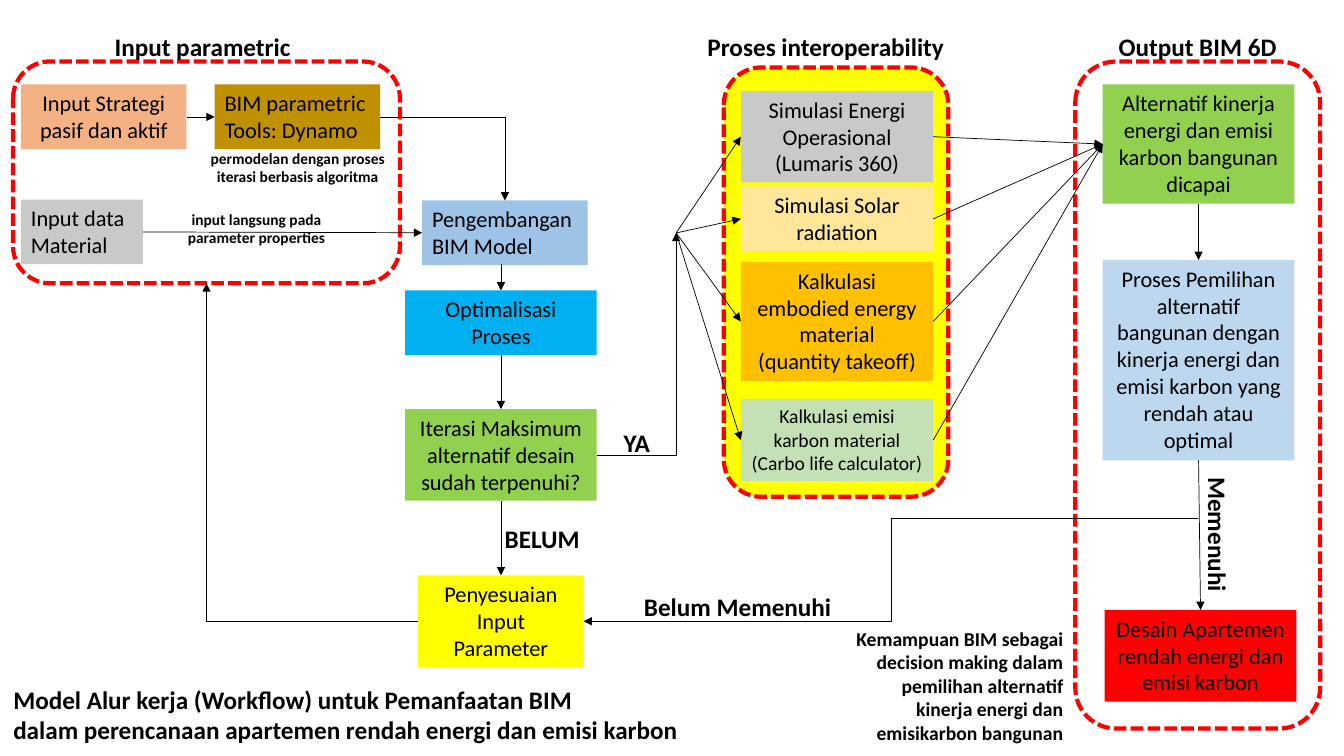
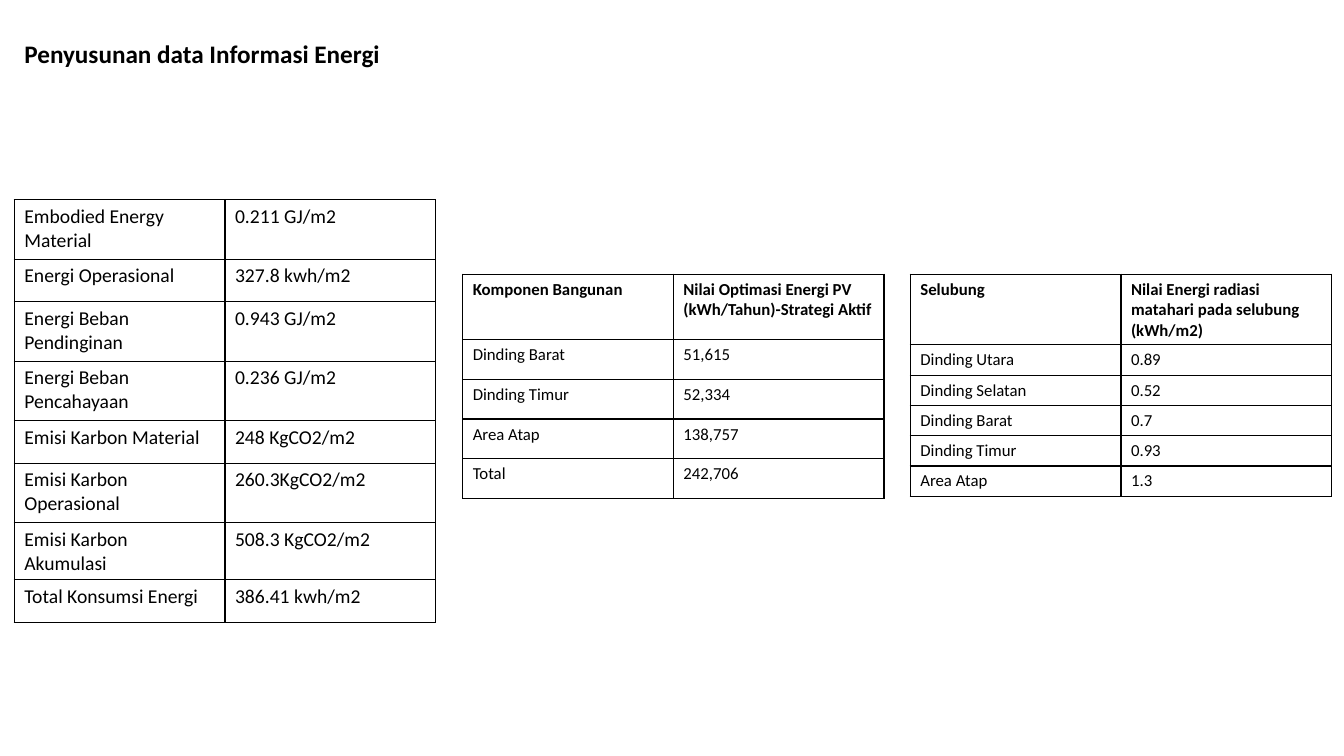
from pptx import Presentation
from pptx.dml.color import RGBColor
from pptx.enum import dml, shapes, text
from pptx.oxml import ns, xmlchemy
from pptx.util import Cm, Pt

FONT = "Calibri"
BLACK, RED, YELLOW = "000000", "FF0000", "FFFF00"
GREY, GREEN = "C9C9C9", "92D050"
LEFT, CENTER, RIGHT = text.PP_ALIGN.LEFT, text.PP_ALIGN.CENTER, text.PP_ALIGN.RIGHT
STRAIGHT, ELBOW = shapes.MSO_CONNECTOR.STRAIGHT, shapes.MSO_CONNECTOR.ELBOW
TOP_SITE, LEFT_SITE, BOTTOM_SITE, RIGHT_SITE = range(4)


def rgb(value):
    """Turn a hex string into a colour."""
    return RGBColor.from_string(value)


def child(parent, tag, index=None, **attrs):
    """Add one XML element to a parent, at an index or at the end."""
    e = xmlchemy.OxmlElement(tag)
    for name, value in attrs.items():
        e.set(name, str(value))
    parent.insert(len(parent) if index is None else index, e)
    return e


def write(tf, content, size, bold=False, align=LEFT):
    """Write the lines of a text, one paragraph each."""
    for i, line in enumerate(content.split("\n")):
        p = tf.paragraphs[0] if i == 0 else tf.add_paragraph()
        p.alignment = align
        r = p.add_run()
        r.text = line
        r.font.name, r.font.size, r.font.bold = FONT, Pt(size), bold
        r.font.color.rgb = rgb(BLACK)


def title(s, content, x, y, w, h):
    """Place and format the title of a slide."""
    sp = s.shapes.title
    sp.left, sp.top, sp.width, sp.height = Cm(x), Cm(y), Cm(w), Cm(h)
    tf = sp.text_frame
    tf.word_wrap = False
    tf.auto_size = text.MSO_AUTO_SIZE.SHAPE_TO_FIT_TEXT
    tf.vertical_anchor = text.MSO_ANCHOR.TOP
    write(tf, content, 18, True)


def label(s, content, x, y, w, h=1.02, size=18, align=LEFT, wrap=False):
    """Add a bold label without a fill."""
    sp = s.shapes.add_textbox(Cm(x), Cm(y), Cm(w), Cm(h))
    sp.text_frame.word_wrap = wrap
    sp.text_frame.auto_size = text.MSO_AUTO_SIZE.SHAPE_TO_FIT_TEXT
    write(sp.text_frame, content, size, True, align)
    return sp


def step(s, content, color, x, y, w, h, align=CENTER, size=16):
    """Add a filled box for one step of the workflow."""
    sp = s.shapes.add_shape(shapes.MSO_SHAPE.RECTANGLE, Cm(x), Cm(y), Cm(w), Cm(h))
    sp.shadow.inherit = False
    sp.fill.solid()
    sp.fill.fore_color.rgb = rgb(color)
    sp.line.fill.background()
    tf = sp.text_frame
    tf.word_wrap = True
    tf.vertical_anchor = text.MSO_ANCHOR.TOP
    write(tf, content, size, False, align)
    return sp


def frame(s, box, heading, dx, w, color=None):
    """Add a dashed region with its heading above it."""
    sp = s.shapes.add_shape(shapes.MSO_SHAPE.ROUNDED_RECTANGLE, *map(Cm, box))
    sp.shadow.inherit = False
    if color:
        sp.fill.solid()
        sp.fill.fore_color.rgb = rgb(color)
    else:
        sp.fill.background()
    sp.line.color.rgb = rgb(RED)
    sp.line.width = Pt(3)
    sp.line.dash_style = dml.MSO_LINE.SQUARE_DOT
    label(s, heading, box[0] + dx, 0.66, w)
    return sp


def spot(end):
    """Find the point of an end, given as a point or as a shape and its site."""
    sp, site = end
    if isinstance(sp, int):
        return end
    fx, fy = [(0.5, 0), (0, 0.5), (0.5, 1), (1, 0.5)][site]
    return int(sp.left + sp.width * fx), int(sp.top + sp.height * fy)


def arrow(s, start, end, kind=STRAIGHT, corner=False):
    """Draw a thin arrow and glue it to the shapes at its ends."""
    c = s.shapes.add_connector(kind, *spot(start), *spot(end))
    if not isinstance(start[0], int):
        c.begin_connect(*start)
    if not isinstance(end[0], int):
        c.end_connect(*end)
    c.line.color.rgb = rgb(BLACK)
    c.line.width = Pt(0.5)
    spPr = c._element.spPr
    if corner:
        spPr.find(ns.qn("a:prstGeom")).set("prst", "bentConnector2")
    child(spPr.find(ns.qn("a:ln")), "a:tailEnd", type="triangle")
    child(spPr, "a:effectLst")


def input_region(s, box):
    """Build the parametric input and return the parts that arrows meet."""
    x, y = box[:2]
    region = frame(s, box, "Input parametric", 2.31, 4.98)
    strategy = step(s, "Input Strategi pasif dan aktif", "F4B183", x + 0.2, y + 0.58, 4.17, 1.63)
    tools = step(s, "BIM parametric\nTools: Dynamo", "BF9000", x + 5.08, y + 0.58, 4.17, 1.63, LEFT)
    material = step(s, "Input data Material", GREY, x + 0.2, y + 3.48, 3.07, 1.63, LEFT)
    for content, dx, dy in [
        ("permodelan dengan proses iterasi berbasis algoritma", 4.52, 2.08),
        ("input langsung pada parameter properties", 3.48, 3.61),
    ]:
        label(s, content, x + dx, y + dy, 5.31, 1.19, 11, CENTER, True)
    arrow(s, (strategy, RIGHT_SITE), (tools, LEFT_SITE))
    return region, tools, material


def model_column(s, box):
    """Build the model column and return the parts that arrows meet."""
    x, y, w = box[:3]
    model = step(s, "Pengembangan BIM Model", "9DC3E6", x + 0.43, y, 4.17, 1.63, LEFT)
    optimum = step(s, "Optimalisasi Proses", "00B0F0", x, y + 2.27, w, 1.63)
    check = step(s, "Iterasi Maksimum alternatif desain sudah terpenuhi?", GREEN,
                 x, y + 5.26, w, 2.31)
    adjust = step(s, "Penyesuaian Input Parameter", YELLOW, x + 0.33, y + 9.45, 4.17, 2.31)
    label(s, "BELUM", x + 2.26, y + 8.01, 2.41)
    label(s, "YA", x + 5.26, y + 5.59, 1.17)
    label(s, "Belum Memenuhi", x + 5.77, y + 9.73, 5.26)
    arrow(s, (Cm(x + w / 2), Cm(y + 1.6)), (optimum, TOP_SITE))
    arrow(s, (optimum, BOTTOM_SITE), (check, TOP_SITE))
    arrow(s, (check, BOTTOM_SITE), (adjust, TOP_SITE))
    return model, check, adjust


def process_region(s, box):
    """Build the interoperability region and return its simulation boxes."""
    x, y = box[:2]
    frame(s, box, "Proses interoperability", -0.66, 6.5, YELLOW)
    simulations = [
        ("Simulasi Energi Operasional (Lumaris 360)", GREY, 0.59, 2.31, 16),
        ("Simulasi Solar radiation", "FFE699", 3, 1.63, 16),
        ("Kalkulasi embodied energy material\n(quantity takeoff)", "FFC000", 4.9, 3, 16),
        ("Kalkulasi emisi karbon material\n(Carbo life calculator)", "C5E0B4", 8.36, 2.06, 14),
    ]
    return [step(s, content, color, x + 0.43, y + dy, 4.85, h, size=size)
            for content, color, dy, h, size in simulations]


def output_region(s, box):
    """Build the output region and return its first box."""
    x, y = box[:2]
    frame(s, box, "Output BIM 6D", 0.84, 4.52)
    reached = step(s, "Alternatif kinerja energi dan emisi karbon bangunan dicapai", GREEN,
                   x + 0.69, y + 0.58, 4.83, 3)
    choice = step(s, "Proses Pemilihan alternatif bangunan dengan kinerja energi dan "
                  "emisi karbon yang rendah atau optimal", "BDD7EE", x + 0.69, y + 5, 4.83, 5.05)
    design = step(s, "Desain Apartemen rendah energi dan emisi karbon", RED,
                  x + 0.74, y + 13.82, 4.83, 2.31)
    label(s, "Memenuhi", x + 1.88, y + 11.43, 3.43).rotation = 90
    label(s, "Kemampuan BIM sebagai decision making dalam pemilihan alternatif "
          "kinerja energi dan emisikarbon bangunan", x - 5.84, y + 14.12, 5.79, 3.25,
          14, RIGHT, True)
    arrow(s, (reached, BOTTOM_SITE), (choice, TOP_SITE))
    arrow(s, (choice, BOTTOM_SITE), (design, TOP_SITE))
    return reached


def workflow_slide(prs):
    """Build the workflow slide and link its regions."""
    s = prs.slides.add_slide(prs.slide_layouts[5])
    title(s, "Model Alur kerja (Workflow) untuk Pemanfaatan BIM\n"
          "dalam perencanaan apartemen rendah energi dan emisi karbon", 0.08, 17.12, 17.4, 1.8)
    simulations = process_region(s, (18.24, 1.7, 5.66, 10.82))
    region, tools, material = input_region(s, (0.33, 1.55, 9.75, 5.59))
    model, check, adjust = model_column(s, (10.21, 5.05, 4.83, 11.76))
    reached = output_region(s, (27.1, 1.55, 6.17, 16.81))
    hub = Cm(17.04), Cm(5.87)
    arrow(s, (material, RIGHT_SITE), (model, LEFT_SITE))
    arrow(s, (tools, RIGHT_SITE), (model, TOP_SITE), ELBOW, True)
    arrow(s, (adjust, LEFT_SITE), (region, BOTTOM_SITE), ELBOW, True)
    arrow(s, (check, RIGHT_SITE), hub, ELBOW, True)
    arrow(s, (Cm(30.2), Cm(13.06)), (adjust, RIGHT_SITE), ELBOW)
    for sp in simulations:
        arrow(s, hub, (sp, LEFT_SITE))
        arrow(s, (sp, RIGHT_SITE), (reached, LEFT_SITE))


def border(cell):
    """Give a cell thin black borders."""
    tcPr = cell._tc.get_or_add_tcPr()
    for i, side in enumerate(("a:lnL", "a:lnR", "a:lnT", "a:lnB")):
        ln = child(tcPr, side, i, w=Pt(1))
        child(child(ln, "a:solidFill"), "a:srgbClr", val=BLACK)


def data_table(s, x, y, heights, rows, size, header=False):
    """Add a bordered table with two equal columns."""
    shape = s.shapes.add_table(len(rows), 2, Cm(x), Cm(y), Cm(10.62), Cm(sum(heights)))
    table = shape.table
    table.first_row = table.horz_banding = False
    for i, (row, height) in enumerate(zip(rows, heights)):
        table.rows[i].height = Cm(height)
        for cell, content in zip(table.rows[i].cells, row):
            border(cell)
            cell.fill.background()
            write(cell.text_frame, content, size, header and i == 0)


def energy_slide(prs):
    """Build the slide with the three energy tables."""
    s = prs.slides.add_slide(prs.slide_layouts[5])
    title(s, "Penyusunan data Informasi Energi", 0.36, 0.84, 9.55, 1.02)
    low, tall = 1.07, 1.5
    data_table(s, 0.36, 5.03, [tall, low, tall, tall, low, tall, low, low], [
        ("Embodied Energy Material", "0.211 GJ/m2"),
        ("Energi Operasional", "327.8 kwh/m2"),
        ("Energi Beban Pendinginan", "0.943 GJ/m2"),
        ("Energi Beban Pencahayaan", "0.236 GJ/m2"),
        ("Emisi Karbon Material", "248 KgCO2/m2"),
        ("Emisi Karbon Operasional", "260.3KgCO2/m2"),
        ("Emisi Karbon Akumulasi", "508.3 KgCO2/m2"),
        ("Total Konsumsi Energi", "386.41 kwh/m2"),
    ], 14)
    data_table(s, 11.66, 6.91, [1.65] + [1] * 4, [
        ("Komponen Bangunan", "Nilai Optimasi Energi PV (kWh/Tahun)-Strategi Aktif"),
        ("Dinding Barat", "51,615"),
        ("Dinding Timur", "52,334"),
        ("Area Atap", "138,757"),
        ("Total", "242,706"),
    ], 12, True)
    data_table(s, 22.94, 6.91, [0.91] + [0.74] * 5, [
        ("Selubung", "Nilai Energi radiasi matahari pada selubung (kWh/m2)"),
        ("Dinding Utara", "0.89"),
        ("Dinding Selatan", "0.52"),
        ("Dinding Barat", "0.7"),
        ("Dinding Timur", "0.93"),
        ("Area Atap", "1.3"),
    ], 12, True)


def main():
    """Build and save the presentation."""
    prs = Presentation()
    prs.slide_width, prs.slide_height = Cm(33.87), Cm(19.05)
    workflow_slide(prs)
    energy_slide(prs)
    prs.save("out.pptx")


if __name__ == "__main__":
    main()
